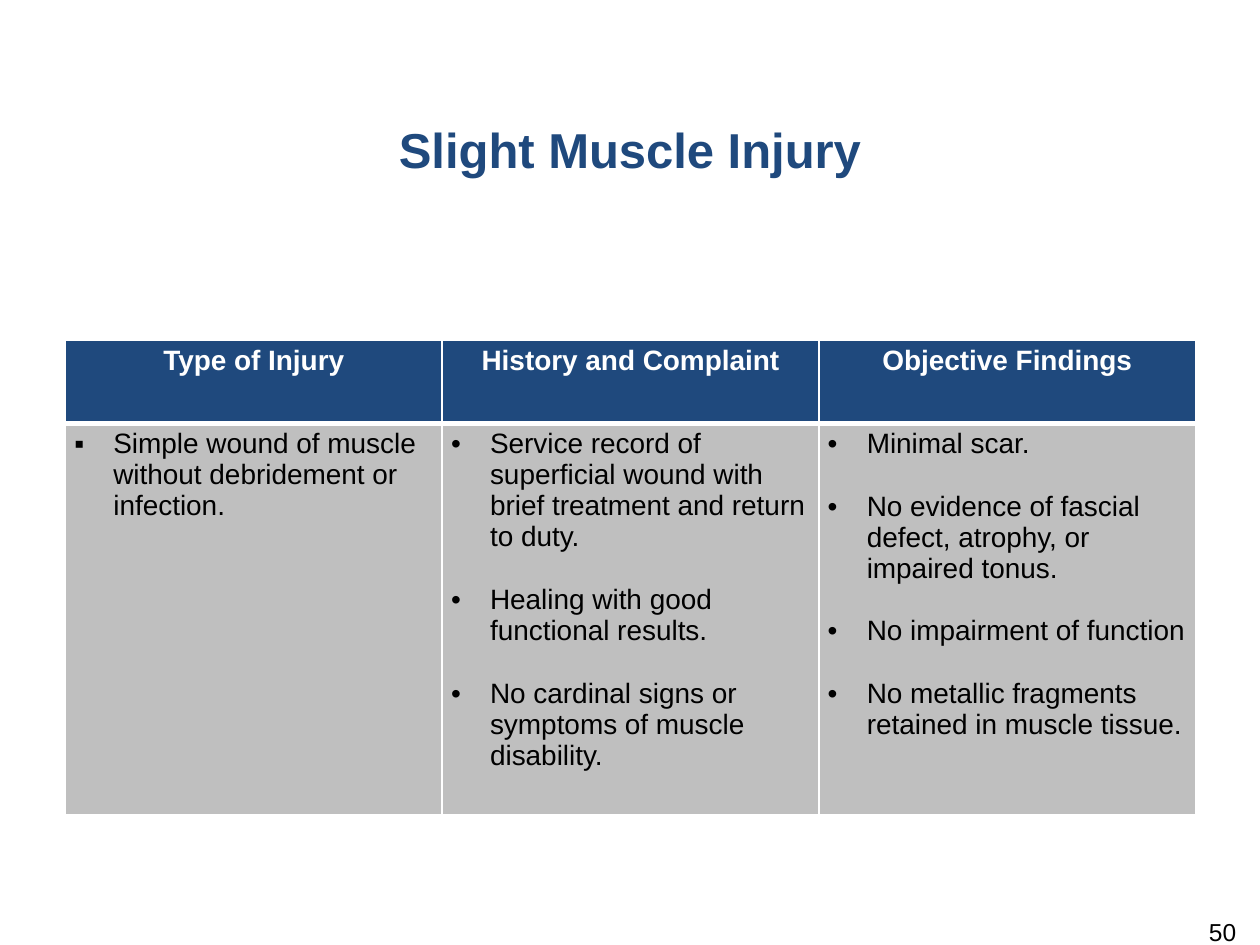
"""Build the slight muscle injury slide."""
from lxml.etree import SubElement
from pptx import Presentation
from pptx.dml.color import RGBColor
from pptx.enum.text import MSO_ANCHOR, PP_ALIGN
from pptx.oxml.ns import qn
from pptx.util import Inches, Pt

NAVY = RGBColor(0x1F, 0x49, 0x7D)
GRAY = RGBColor(0xBF, 0xBF, 0xBF)
WHITE = RGBColor(0xFF, 0xFF, 0xFF)
BLACK = RGBColor(0, 0, 0)


def write(para, text, size, color, bold=False, align=PP_ALIGN.LEFT):
    para.text, para.alignment = text, align
    font = para.runs[0].font
    font.color.rgb = color
    look = {"name": "Arial", "size": Pt(size), "bold": bold}
    for key, value in look.items():
        setattr(font, key, value)


def border(cell, sides):
    props = cell._tc.get_or_add_tcPr()
    for side, width in sides.items():
        line = SubElement(props, qn(f"a:{side}"), w=str(Pt(width)))
        fill = SubElement(line, qn("a:solidFill"))
        SubElement(fill, qn("a:srgbClr"), val=str(WHITE))


deck = Presentation()
deck.slide_width, deck.slide_height = Inches(10), Inches(7.5)
slide = deck.slides.add_slide(deck.slide_layouts[6])

labels = [
    ("Slight Muscle Injury", (0, 0.87, 10, 1.19), 28, NAVY, True,
     PP_ALIGN.CENTER, MSO_ANCHOR.TOP, 0.08),
    ("50", (7.58, 7.22, 2.33, 0.4), 14, BLACK, False,
     PP_ALIGN.RIGHT, MSO_ANCHOR.MIDDLE, 0),
]
for text, place, size, color, bold, align, anchor, top in labels:
    box = slide.shapes.add_textbox(*[Inches(n) for n in place])
    frame = box.text_frame
    look = {"word_wrap": True, "vertical_anchor": anchor, "margin_top": Inches(top)}
    for key, value in look.items():
        setattr(frame, key, value)
    para = frame.paragraphs[0]
    write(para, text, size, color, bold, align)
    para.space_after = Pt(6)

columns = [
    ("Type of Injury", "▪", [
        "Simple wound of muscle without debridement or infection."]),
    ("History and Complaint", "•", [
        "Service record of superficial wound with brief treatment and return to duty.",
        "Healing with good functional results.",
        "No cardinal signs or symptoms of muscle disability."]),
    ("Objective Findings", "•", [
        "Minimal scar.",
        "No evidence of fascial defect, atrophy, or impaired tonus.",
        "No impairment of function",
        "No metallic fragments retained in muscle tissue."]),
]
table = slide.shapes.add_table(
    2, 3, Inches(0.52), Inches(2.7), Inches(8.97), Inches(3.77)).table
for row, height in zip(table.rows, (0.66, 3.11)):
    row.height = Inches(height)

pads = {"margin_left": 0.07, "margin_right": 0.07,
        "margin_top": 0.04, "margin_bottom": 0.04}
for col, (title, mark, items) in enumerate(columns):
    table.columns[col].width = Inches(2.99)
    head, body = table.cell(0, col), table.cell(1, col)
    for cell, fill, top, base in ((head, NAVY, 1, 3), (body, GRAY, 3, 1)):
        for key, value in pads.items():
            setattr(cell, key, Inches(value))
        border(cell, {"lnL": 1, "lnR": 1, "lnT": top, "lnB": base})
        cell.fill.solid()
        cell.fill.fore_color.rgb = fill
    write(head.text_frame.paragraphs[0], title, 16, WHITE, True, PP_ALIGN.CENTER)
    frame = body.text_frame
    for num, item in enumerate(items):
        para = frame.add_paragraph() if num else frame.paragraphs[0]
        props = para._p.get_or_add_pPr()
        props.set("marL", str(Inches(0.31)))
        props.set("indent", str(Inches(-0.31)))
        SubElement(props, qn("a:buFont"), typeface="Arial")
        SubElement(props, qn("a:buChar"), char=mark)
        write(para, item, 16, BLACK)
        if num:
            para.space_before = Pt(18)

deck.save("out.pptx")
